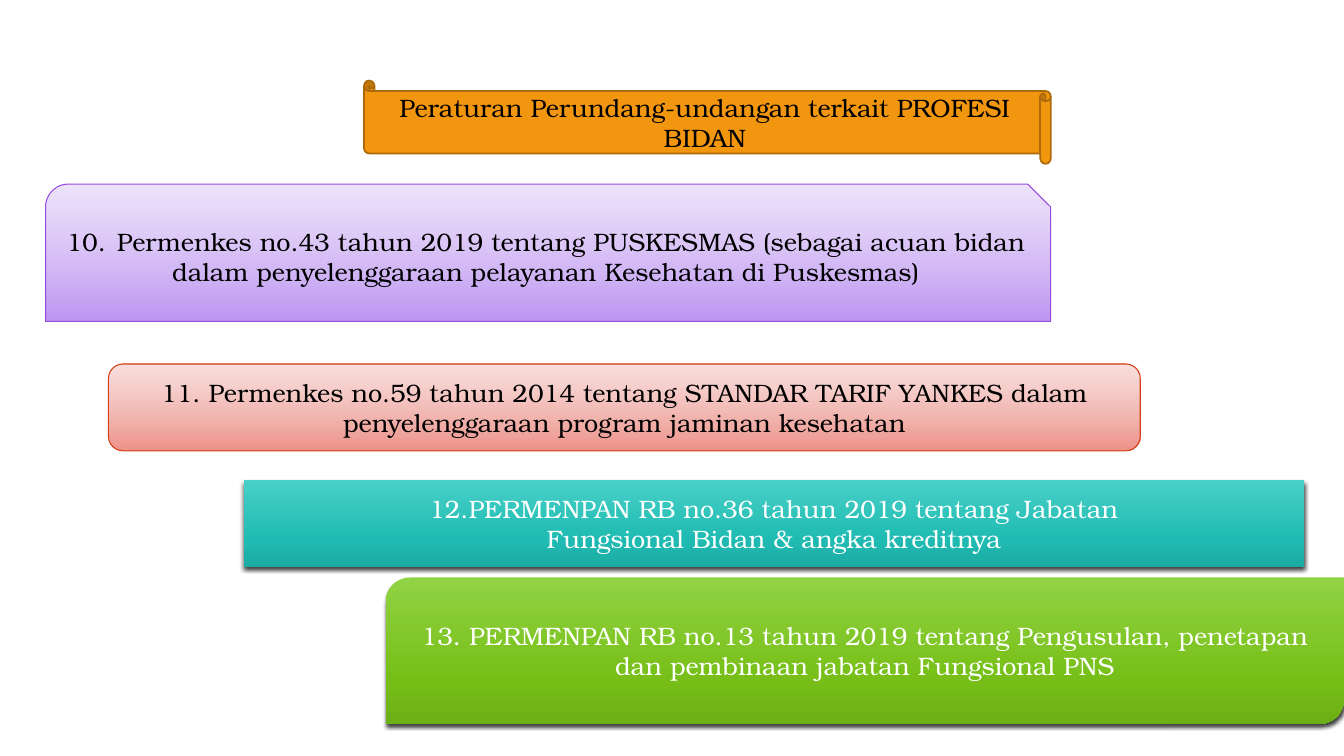
from pptx import Presentation
from pptx import util as u
from pptx.dml.color import RGBColor
from pptx.enum import shapes, text
from pptx.oxml import ns, xmlchemy

BLACK = RGBColor(0x00, 0x00, 0x00)
WHITE = RGBColor(0xFF, 0xFF, 0xFF)
ORANGE = RGBColor(0xF3, 0x96, 0x0F)
BROWN = RGBColor(0xAC, 0x6A, 0x0B)
PURPLE = RGBColor(0x96, 0x4A, 0xDD)
RED = RGBColor(0xD6, 0x3E, 0x15)
LILAC_STOPS = [(0, RGBColor(0xE1, 0xD0, 0xF9), 60), (100, RGBColor(0xB8, 0x8C, 0xF1), 92)]
ROSE_STOPS = [(0, RGBColor(0xF5, 0xCA, 0xC7), 60), (100, RGBColor(0xEC, 0x89, 0x80), 92)]
TEAL_STOPS = [(0, RGBColor(0x48, 0xD0, 0xC8), 100), (69, RGBColor(0x1F, 0xBB, 0xB2), 100),
              (100, RGBColor(0x1C, 0xAB, 0xA3), 100)]
GREEN_STOPS = [(0, RGBColor(0x91, 0xD3, 0x44), 100), (69, RGBColor(0x77, 0xBF, 0x18), 100),
               (100, RGBColor(0x6D, 0xAF, 0x16), 100)]


def add_element(parent, tag, **attributes):
    """Append a drawing element with the given attributes and return it."""
    element = xmlchemy.OxmlElement(tag)
    for name, value in attributes.items():
        element.set(name, str(value))
    parent.append(element)
    return element


def add_color(parent, color, opacity):
    """Append a colour with an opacity in percent."""
    element = add_element(parent, "a:srgbClr", val=color)
    if opacity < 100:
        add_element(element, "a:alpha", val=opacity * 1000)


def add_panel(slide, kind, box, wording, font_color):
    """Add an unfilled preset shape with centred text."""
    shape = slide.shapes.add_shape(kind, *[u.Pt(length) for length in box])
    shape.shadow.inherit = False
    frame = shape.text_frame
    frame.word_wrap = True
    frame.vertical_anchor = text.MSO_ANCHOR.MIDDLE
    paragraph = frame.paragraphs[0]
    paragraph.alignment = text.PP_ALIGN.CENTER
    run = paragraph.add_run()
    run.text = wording
    for name, value in {"name": "TeX Gyre Bonum", "size": u.Pt(18)}.items():
        setattr(run.font, name, value)
    run.font.color.rgb = font_color
    return shape


def set_outline(shape, color, width):
    """Give the shape a solid outline."""
    shape.line.color.rgb = color
    shape.line.width = u.Pt(width)


def set_gradient(shape, stops):
    """Fill the shape from top to bottom through the given stops."""
    shape.fill.gradient()
    shape.fill.gradient_angle = 270
    stop_list = shape._element.spPr.find(ns.qn("a:gradFill")).find(ns.qn("a:gsLst"))
    for stop in list(stop_list):
        stop_list.remove(stop)
    for position, color, opacity in stops:
        add_color(add_element(stop_list, "a:gs", pos=position * 1000), color, opacity)


def set_shadow(shape):
    """Cast a soft dark shadow below the shape."""
    effects = shape._element.spPr.find(ns.qn("a:effectLst"))
    shadow = add_element(effects, "a:outerShdw", blurRad=u.Pt(3), dist=u.Pt(2),
                         dir=90 * 60000, algn="ctr", rotWithShape=0)
    add_color(shadow, BLACK, 75)


def add_title_scroll(slide, box, wording):
    """Add the mirrored scroll that carries the title."""
    shape = add_panel(slide, shapes.MSO_SHAPE.HORIZONTAL_SCROLL, box, wording, BLACK)
    shape.fill.solid()
    shape.fill.fore_color.rgb = ORANGE
    set_outline(shape, BROWN, 1.25)
    shape.rotation = 180
    shape._element.spPr.find(ns.qn("a:xfrm")).set("flipV", "1")


def add_outlined_panel(slide, kind, box, wording, stops, outline):
    """Add a pale gradient panel with a thin outline."""
    shape = add_panel(slide, kind, box, wording, BLACK)
    set_gradient(shape, stops)
    set_outline(shape, outline, 0.75)
    return shape


def add_shadowed_panel(slide, kind, box, wording, stops):
    """Add a strong gradient panel with a shadow and no outline."""
    shape = add_panel(slide, kind, box, wording, WHITE)
    set_gradient(shape, stops)
    shape.line.fill.background()
    set_shadow(shape)


def set_tab_stop(shape, position):
    """Set a left tab stop in the first paragraph."""
    properties = shape.text_frame.paragraphs[0]._p.get_or_add_pPr()
    add_element(add_element(properties, "a:tabLst"), "a:tab", pos=u.Pt(position), algn="l")


def main():
    """Build the slide of midwifery regulations."""
    presentation = Presentation()
    presentation.slide_width = u.Pt(960)
    presentation.slide_height = u.Pt(540)
    slide = presentation.slides.add_slide(presentation.slide_layouts[6])
    preset = shapes.MSO_SHAPE
    add_title_scroll(slide, (260, 57.5, 490.5, 59.5),
                     "Peraturan Perundang-undangan terkait PROFESI BIDAN")
    puskesmas = add_outlined_panel(
        slide, preset.SNIP_ROUND_RECTANGLE, (32.5, 131.5, 718, 98),
        "10. \tPermenkes no.43 tahun 2019 tentang PUSKESMAS (sebagai acuan bidan "
        "dalam penyelenggaraan pelayanan Kesehatan di Puskesmas)", LILAC_STOPS, PURPLE)
    set_tab_stop(puskesmas, 36)
    add_outlined_panel(
        slide, preset.FLOWCHART_ALTERNATE_PROCESS, (77.5, 260, 737, 62),
        "11. Permenkes no.59 tahun 2014 tentang STANDAR TARIF YANKES dalam "
        "penyelenggaraan program jaminan kesehatan", ROSE_STOPS, RED)
    add_shadowed_panel(
        slide, preset.FLOWCHART_PREDEFINED_PROCESS, (174, 343, 757.5, 62),
        "12.PERMENPAN RB no.36 tahun 2019 tentang Jabatan Fungsional Bidan "
        "& angka kreditnya", TEAL_STOPS)
    add_shadowed_panel(
        slide, preset.ROUND_2_DIAG_RECTANGLE, (275.5, 412.5, 684.5, 104.5),
        "13. PERMENPAN RB no.13 tahun 2019 tentang Pengusulan, penetapan dan "
        "pembinaan jabatan Fungsional PNS", GREEN_STOPS)
    presentation.save("out.pptx")


if __name__ == "__main__":
    main()
